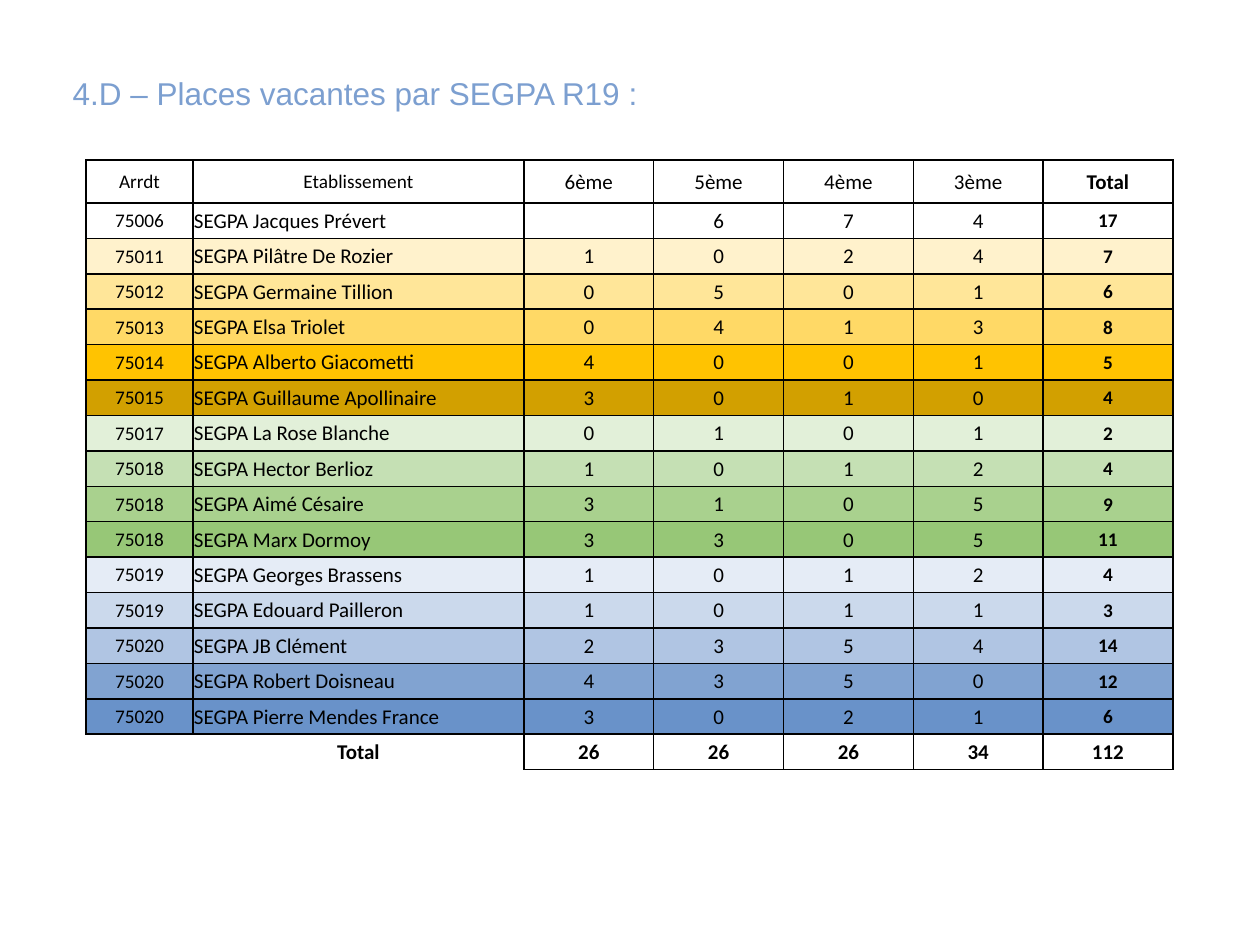
import pptx
import pptx.dml.color
import pptx.enum.text
import pptx.util
from lxml import etree
from pptx.oxml.ns import qn

RGBColor = pptx.dml.color.RGBColor
Align = pptx.enum.text.PP_ALIGN
Anchor = pptx.enum.text.MSO_ANCHOR

PX = 914400 // 126
BLACK = RGBColor(0x00, 0x00, 0x00)
WHITE = RGBColor(0xFF, 0xFF, 0xFF)
TITLE_BLUE = RGBColor(0x7C, 0x9F, 0xD0)
GOLDS = [RGBColor.from_string(code) for code in
         ("FFF2CC", "FFE699", "FFD966", "FFC301", "D2A000")]
GREENS = [RGBColor.from_string(code) for code in
          ("E2F0D9", "C5E0B4", "A9D18E", "97C777")]
BLUES = [RGBColor.from_string(code) for code in
         ("E5ECF6", "CBD9EC", "B0C5E3", "81A3D1", "6992C9")]
ROW_FILLS = [WHITE, WHITE, *GOLDS, *GREENS, *BLUES, WHITE]

HEADINGS = ["Arrdt", "Etablissement", "6ème", "5ème", "4ème", "3ème", "Total"]
VACANCIES = [
    ("75006", "Jacques Prévert", (None, 6, 7, 4)),
    ("75011", "Pilâtre De Rozier", (1, 0, 2, 4)),
    ("75012", "Germaine Tillion", (0, 5, 0, 1)),
    ("75013", "Elsa Triolet", (0, 4, 1, 3)),
    ("75014", "Alberto Giacometti", (4, 0, 0, 1)),
    ("75015", "Guillaume Apollinaire", (3, 0, 1, 0)),
    ("75017", "La Rose Blanche", (0, 1, 0, 1)),
    ("75018", "Hector Berlioz", (1, 0, 1, 2)),
    ("75018", "Aimé Césaire", (3, 1, 0, 5)),
    ("75018", "Marx Dormoy", (3, 3, 0, 5)),
    ("75019", "Georges Brassens", (1, 0, 1, 2)),
    ("75019", "Edouard Pailleron", (1, 0, 1, 1)),
    ("75020", "JB Clément", (2, 3, 5, 4)),
    ("75020", "Robert Doisneau", (4, 3, 5, 0)),
    ("75020", "Pierre Mendes France", (3, 0, 2, 1)),
]
SIDES = ("L", "R", "T", "B")


def px(count):
    return pptx.util.Emu(count * PX)


def table_rows():
    """Return the heading, school and total rows, with the sums worked out."""
    rows = [HEADINGS]
    for district, school, places in VACANCIES:
        total = sum(count or 0 for count in places)
        rows.append([district, f"SEGPA {school}", *places, total])
    grades = zip(*(places for _, _, places in VACANCIES))
    sums = [sum(count or 0 for count in grade) for grade in grades]
    rows.append([None, "Total", *sums, sum(sums)])
    return rows


def set_borders(cell, visible):
    """Draw the visible sides in black and clear the others."""
    properties = cell._tc.get_or_add_tcPr()
    for side in SIDES:
        line = etree.SubElement(properties, qn(f"a:ln{side}"), w="12700")
        if side in visible:
            fill = etree.SubElement(line, qn("a:solidFill"))
            etree.SubElement(fill, qn("a:srgbClr"), val=str(BLACK))
        else:
            etree.SubElement(line, qn("a:noFill"))


def fill_cell(cell, value, fill, size, bold, align, borders):
    set_borders(cell, borders)
    cell.fill.solid()
    cell.fill.fore_color.rgb = fill
    cell.vertical_anchor = Anchor.MIDDLE
    cell.margin_left = cell.margin_right = cell.margin_top = px(1)
    cell.margin_bottom = 0
    paragraph = cell.text_frame.paragraphs[0]
    paragraph.alignment = align
    if value is None:
        etree.SubElement(paragraph._p, qn("a:endParaRPr"), sz=str(size * 100))
    else:
        paragraph.text = str(value)
    font = paragraph.font
    font.name = "Calibri"
    font.size = pptx.util.Pt(size)
    font.bold = bold
    font.color.rgb = BLACK


def cell_look(row, column, last_row, last_column):
    """Return size, boldness, alignment and visible borders of one cell."""
    in_body = 0 < row < last_row
    small = (column == 0 or (row == 0 and column == 1)
             or (in_body and column == last_column))
    bold = column == last_column or row == last_row
    align = Align.LEFT if in_body and column == 1 else Align.CENTER
    borders = SIDES
    if row == last_row and column < 2:
        borders = ("T",) if column == 0 else ("T", "R")
    return 11 if small else 12, bold, align, borders


def add_vacancy_table(page):
    rows = table_rows()
    last_row, last_column = len(rows) - 1, len(HEADINGS) - 1
    frame = page.shapes.add_table(len(rows), len(HEADINGS),
                                  px(86), px(160), px(1087), px(610))
    table = frame.table
    table.first_row = table.horz_banding = False
    widths = [px(107), px(331)] + [px(649) // 5] * 5
    heights = [px(43)] + [px(567) // last_row] * last_row
    for column, width in zip(table.columns, widths):
        column.width = width
    for row, height in zip(table.rows, heights):
        row.height = height
    for row, (values, fill) in enumerate(zip(rows, ROW_FILLS)):
        for column, value in enumerate(values):
            look = cell_look(row, column, last_row, last_column)
            fill_cell(table.cell(row, column), value, fill, *look)


def set_title(page, text):
    title = page.shapes.title
    title.left, title.top, title.width, title.height = (
        px(60), px(50), px(1138), px(742))
    frame = title.text_frame
    frame.word_wrap = True
    frame.vertical_anchor = Anchor.TOP
    frame.margin_top = px(28)
    paragraph = frame.paragraphs[0]
    paragraph.text = text
    paragraph.alignment = Align.LEFT
    paragraph.line_spacing = 0.9
    paragraph.font.name = "Arial"
    paragraph.font.size = pptx.util.Pt(18)
    paragraph.font.color.rgb = TITLE_BLUE


def main():
    deck = pptx.Presentation()
    deck.slide_width, deck.slide_height = px(1260), px(945)
    page = deck.slides.add_slide(deck.slide_layouts[5])
    set_title(page, "4.D – Places vacantes par SEGPA R19 :")
    add_vacancy_table(page)
    deck.save("out.pptx")


if __name__ == "__main__":
    main()
